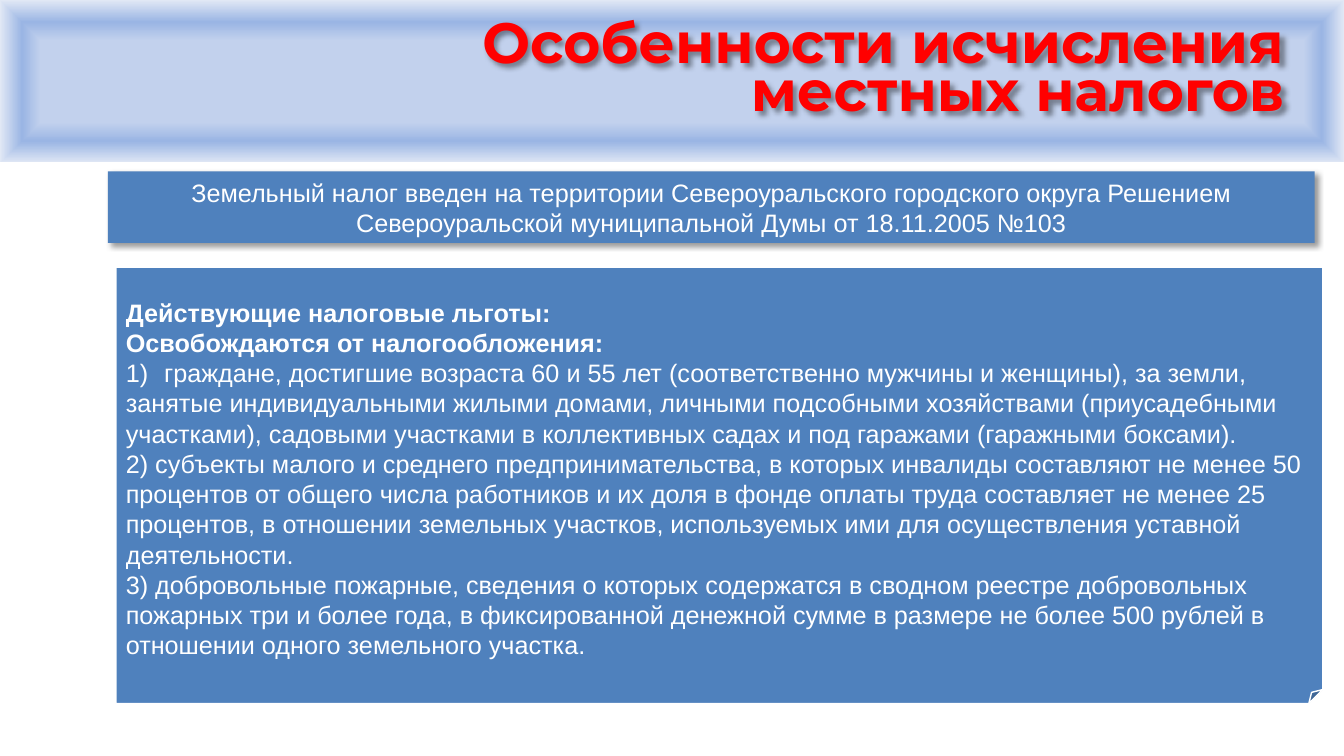
from dataclasses import dataclass

from lxml.etree import SubElement
from pptx import Presentation
from pptx.dml.color import RGBColor
from pptx.enum.shapes import MSO_CONNECTOR, MSO_SHAPE
from pptx.enum.text import MSO_ANCHOR, PP_ALIGN
from pptx.oxml import parse_xml
from pptx.oxml.ns import nsdecls, qn
from pptx.shapes.autoshape import Shape
from pptx.slide import Slide
from pptx.util import Inches, Pt

COLORS = {
    "white": "FFFFFF",
    "black": "000000",
    "panel": "4F81BD",
    "title": "FF0000",
    "band_center": "C2D1ED",
    "band_ring": "9AB5E4",
    "band_edge": "E1E8F5",
}
BAND_STOPS = ((50, "band_center"), (73, "band_ring"), (100, "band_edge"))
SLIDE_WIDTH, SLIDE_HEIGHT, BAND_HEIGHT = 13.33, 7.5, 1.62


@dataclass
class Line:
    text: str
    bold: bool = False
    numbered: bool = False


@dataclass
class Panel:
    preset: MSO_SHAPE
    left: float
    top: float
    height: float
    lines: list[Line]
    align: PP_ALIGN = PP_ALIGN.LEFT
    width: float = 11.97


DECREE = Panel(MSO_SHAPE.RECTANGLE, 1.07, 1.7, 0.71, [
    Line("Земельный налог введен на территории Североуральского городского округа Решением "
         "Североуральской муниципальной Думы от 18.11.2005 №103"),
], PP_ALIGN.CENTER)
BENEFITS = Panel(MSO_SHAPE.FOLDED_CORNER, 1.15, 2.65, 4.33, [
    Line("Действующие налоговые льготы:", bold=True),
    Line("Освобождаются от налогообложения:", bold=True),
    Line("граждане, достигшие возраста 60 и 55 лет (соответственно мужчины и женщины), за земли,",
         numbered=True),
    Line("занятые индивидуальными жилыми домами, личными подсобными хозяйствами (приусадебными "
         "участками), садовыми участками в коллективных садах и под гаражами (гаражными боксами)."),
    Line("2) субъекты малого и среднего предпринимательства, в которых инвалиды составляют не менее "
         "50 процентов от общего числа работников и их доля в фонде оплаты труда составляет не менее "
         "25 процентов, в отношении земельных участков, используемых ими для осуществления уставной "
         "деятельности."),
    Line("3) добровольные пожарные, сведения о которых содержатся в сводном реестре добровольных "
         "пожарных три и более года, в фиксированной денежной сумме в размере не более 500 рублей "
         "в отношении одного земельного участка."),
])


def color(name: str) -> RGBColor:
    return RGBColor.from_string(COLORS[name])


def add_soft_shadow(shape: Shape) -> None:
    shape.shadow.inherit = False
    effects = shape._element.spPr.find(qn("a:effectLst"))
    shadow = SubElement(effects, qn("a:outerShdw"), blurRad=str(Pt(4)), dist=str(Pt(3)),
                        dir="2700000", algn="tl", rotWithShape="0")
    tint = SubElement(shadow, qn("a:srgbClr"), val=COLORS["black"])
    SubElement(tint, qn("a:alpha"), val="40000")


def set_fold(shape: Shape, share: float) -> None:
    """Size the folded corner as a share of the shape's shorter side."""
    geometry = shape._element.spPr.find(qn("a:prstGeom"))
    guides = geometry.find(qn("a:avLst"))
    SubElement(guides, qn("a:gd"), name="adj", fmla=f"val {round(share * 100000)}")


def add_band(slide: Slide) -> None:
    """Header band with a gradient running from its centre to its edges."""
    band = slide.shapes.add_shape(MSO_SHAPE.RECTANGLE, 0, 0,
                                  Inches(SLIDE_WIDTH), Inches(BAND_HEIGHT))
    band.shadow.inherit = False
    band.line.fill.background()
    stops = "".join(f'<a:gs pos="{position * 1000}"><a:srgbClr val="{COLORS[name]}"/></a:gs>'
                    for position, name in BAND_STOPS)
    gradient = parse_xml(
        f'<a:gradFill {nsdecls("a")} rotWithShape="1"><a:gsLst>{stops}</a:gsLst>'
        '<a:path path="shape"><a:fillToRect l="50000" t="50000" r="50000" b="50000"/></a:path>'
        '</a:gradFill>')
    band._element.spPr.find(qn("a:prstGeom")).addnext(gradient)

    border = slide.shapes.add_connector(MSO_CONNECTOR.STRAIGHT, 0, Inches(BAND_HEIGHT),
                                        Inches(SLIDE_WIDTH), Inches(BAND_HEIGHT))
    border.line.color.rgb = color("white")
    border.line.width = Pt(2)
    SubElement(border._element.spPr, qn("a:effectLst"))


def add_panel(slide: Slide, panel: Panel) -> Shape:
    shape = slide.shapes.add_shape(panel.preset, Inches(panel.left), Inches(panel.top),
                                   Inches(panel.width), Inches(panel.height))
    shape.shadow.inherit = False
    shape.fill.solid()
    shape.fill.fore_color.rgb = color("panel")
    shape.line.fill.background()
    frame = shape.text_frame
    frame.word_wrap = True
    frame.vertical_anchor = MSO_ANCHOR.MIDDLE
    for index, line in enumerate(panel.lines):
        paragraph = frame.add_paragraph() if index else frame.paragraphs[0]
        paragraph.text = line.text
        paragraph.alignment = panel.align
        if line.numbered:
            properties = paragraph._p.get_or_add_pPr()
            properties.set("marL", str(Inches(0.38)))
            properties.set("indent", str(Inches(-0.38)))
            SubElement(properties, qn("a:buAutoNum"), type="arabicParenR")
        font = paragraph.font
        font.name, font.size, font.bold = "Arial", Pt(18), line.bold
        font.color.rgb = color("white")
    return shape


def add_title(slide: Slide, text: str) -> None:
    title = slide.shapes.add_textbox(Inches(2.65), Inches(0.16), Inches(10.19), Inches(1.09))
    add_soft_shadow(title)
    frame = title.text_frame
    frame.word_wrap = True
    frame.vertical_anchor = MSO_ANCHOR.BOTTOM
    paragraph = frame.paragraphs[0]
    paragraph.text = text
    paragraph.alignment = PP_ALIGN.RIGHT
    paragraph.line_spacing = 0.7
    font = paragraph.font
    font.name, font.size, font.bold = "Montserrat", Pt(40.5), True
    font.color.rgb = color("title")


def main() -> None:
    presentation = Presentation()
    presentation.slide_width = Inches(SLIDE_WIDTH)
    presentation.slide_height = Inches(SLIDE_HEIGHT)
    slide = presentation.slides.add_slide(presentation.slide_layouts[6])

    add_band(slide)
    add_soft_shadow(add_panel(slide, DECREE))
    benefits = add_panel(slide, BENEFITS)
    set_fold(benefits, 0.032)
    benefits.line.color.rgb = color("white")
    benefits.line.width = Pt(1)
    add_title(slide, "Особенности исчисления местных налогов")
    presentation.save("out.pptx")


if __name__ == "__main__":
    main()
